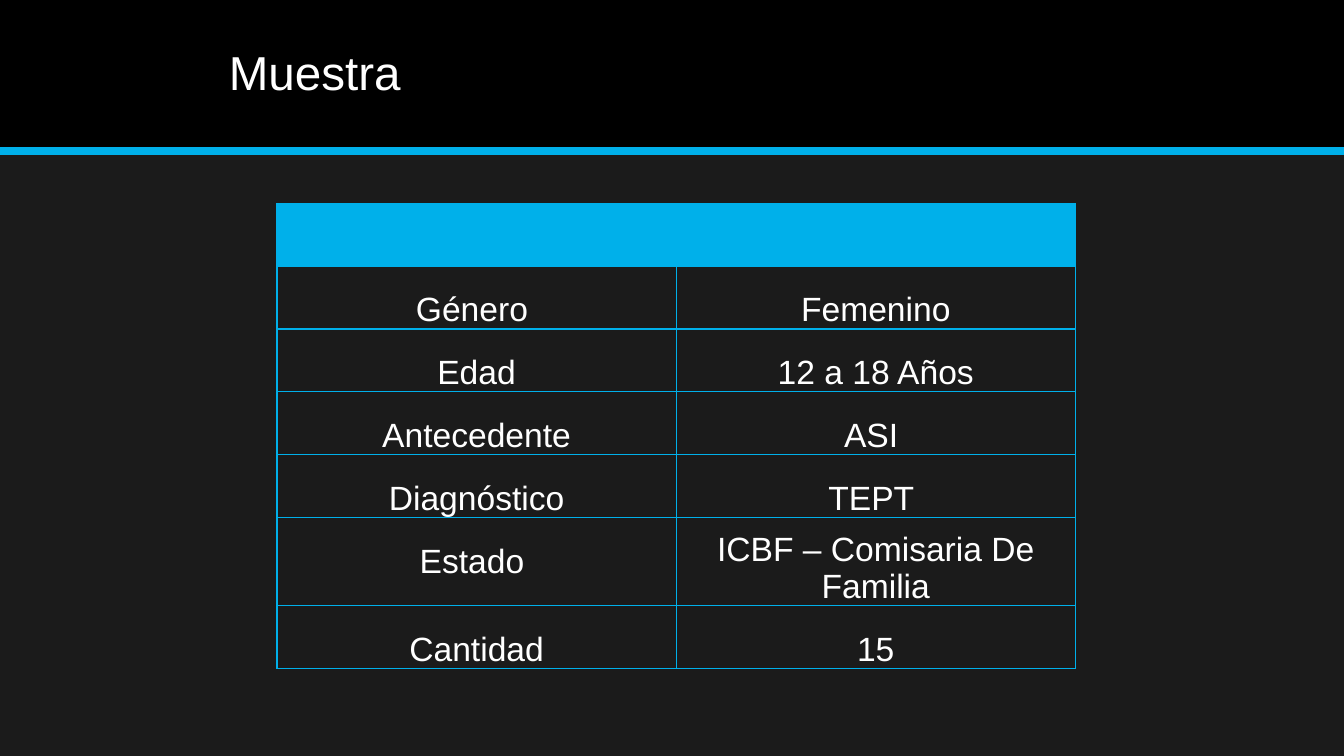
import lxml.etree
import pptx
import pptx.dml.color
import pptx.enum.shapes
import pptx.enum.text
import pptx.oxml.ns
import pptx.util

Cm = pptx.util.Cm
Pt = pptx.util.Pt
Anchor = pptx.enum.text.MSO_ANCHOR
Align = pptx.enum.text.PP_ALIGN
qn = pptx.oxml.ns.qn

COLORS = {"background": "1B1B1B", "band": "000000", "accent": "00B0EA", "text": "FFFFFF"}
SLIDE_WIDTH = Cm(33.87)
BAND_HEIGHT = Cm(3.81)
ROW_HEIGHT = Cm(1.58)
TALL_ROW_HEIGHT = Cm(2.23)
COLUMN_WIDTH = Cm(10.06)

SAMPLE = [
    ("Género ", "Femenino"),
    ("Edad", "12 a 18 Años"),
    ("Antecedente", "ASI "),
    ("Diagnóstico", "TEPT "),
    ("Estado ", "ICBF – Comisaria De Familia"),
    ("Cantidad", "15"),
]


def color(name):
    return pptx.dml.color.RGBColor.from_string(COLORS[name])


def style_text(paragraph, size, alignment):
    paragraph.alignment = alignment
    paragraph.font.size = Pt(size)
    paragraph.font.name = "Arial"
    paragraph.font.color.rgb = color("text")


presentation = pptx.Presentation()
presentation.slide_width = SLIDE_WIDTH
presentation.slide_height = Cm(19.05)
slide = presentation.slides.add_slide(presentation.slide_layouts[5])
slide.background.fill.solid()
slide.background.fill.fore_color.rgb = color("background")

band = slide.shapes.add_shape(
    pptx.enum.shapes.MSO_SHAPE.RECTANGLE, 0, 0, SLIDE_WIDTH, BAND_HEIGHT)
band.shadow.inherit = False
band.fill.solid()
band.fill.fore_color.rgb = color("band")
band.line.fill.background()

rule = slide.shapes.add_connector(
    pptx.enum.shapes.MSO_CONNECTOR.STRAIGHT, 0, BAND_HEIGHT, SLIDE_WIDTH, BAND_HEIGHT)
rule.line.color.rgb = color("accent")
rule.line.width = Pt(6)
lxml.etree.SubElement(rule.element.spPr, qn("a:effectLst"))

title = slide.shapes.title
title.left, title.top, title.width, title.height = Cm(2.97), Cm(0.36), Cm(27.94), Cm(3.05)
title.text_frame.text = "Muestra"
title.text_frame.margin_left = Cm(2.8)
title.text_frame.vertical_anchor = Anchor.MIDDLE
title.text_frame.paragraphs[0].line_spacing = 0.9
style_text(title.text_frame.paragraphs[0], 34, Align.LEFT)
slide.shapes.element.append(title.element)

row_count = len(SAMPLE) + 1
table = slide.shapes.add_table(
    row_count, 2, Cm(6.98), Cm(5.13), COLUMN_WIDTH * 2,
    ROW_HEIGHT * (row_count - 1) + TALL_ROW_HEIGHT).table
table.first_row = False
table.horz_banding = False
for column in table.columns:
    column.width = COLUMN_WIDTH
for row in table.rows:
    row.height = ROW_HEIGHT
table.rows[5].height = TALL_ROW_HEIGHT

for cell in table.iter_cells():
    properties = cell._tc.get_or_add_tcPr()
    for side in ("a:lnL", "a:lnR", "a:lnT", "a:lnB"):
        border = lxml.etree.SubElement(properties, qn(side), w=str(Pt(1)))
        border_fill = lxml.etree.SubElement(border, qn("a:solidFill"))
        lxml.etree.SubElement(border_fill, qn("a:srgbClr"), val=COLORS["accent"])
    cell.fill.background()

header = table.cell(0, 0)
header.merge(table.cell(0, 1))
header.fill.solid()
header.fill.fore_color.rgb = color("accent")

for row_index, values in enumerate(SAMPLE, start=1):
    for column_index, value in enumerate(values):
        cell = table.cell(row_index, column_index)
        cell.text = value
        cell.margin_left = cell.margin_right = cell.margin_top = Cm(0.03)
        cell.margin_bottom = 0
        cell.vertical_anchor = Anchor.BOTTOM
        style_text(cell.text_frame.paragraphs[0], 24, Align.CENTER)
table.cell(5, 0).vertical_anchor = Anchor.MIDDLE

presentation.save("out.pptx")
